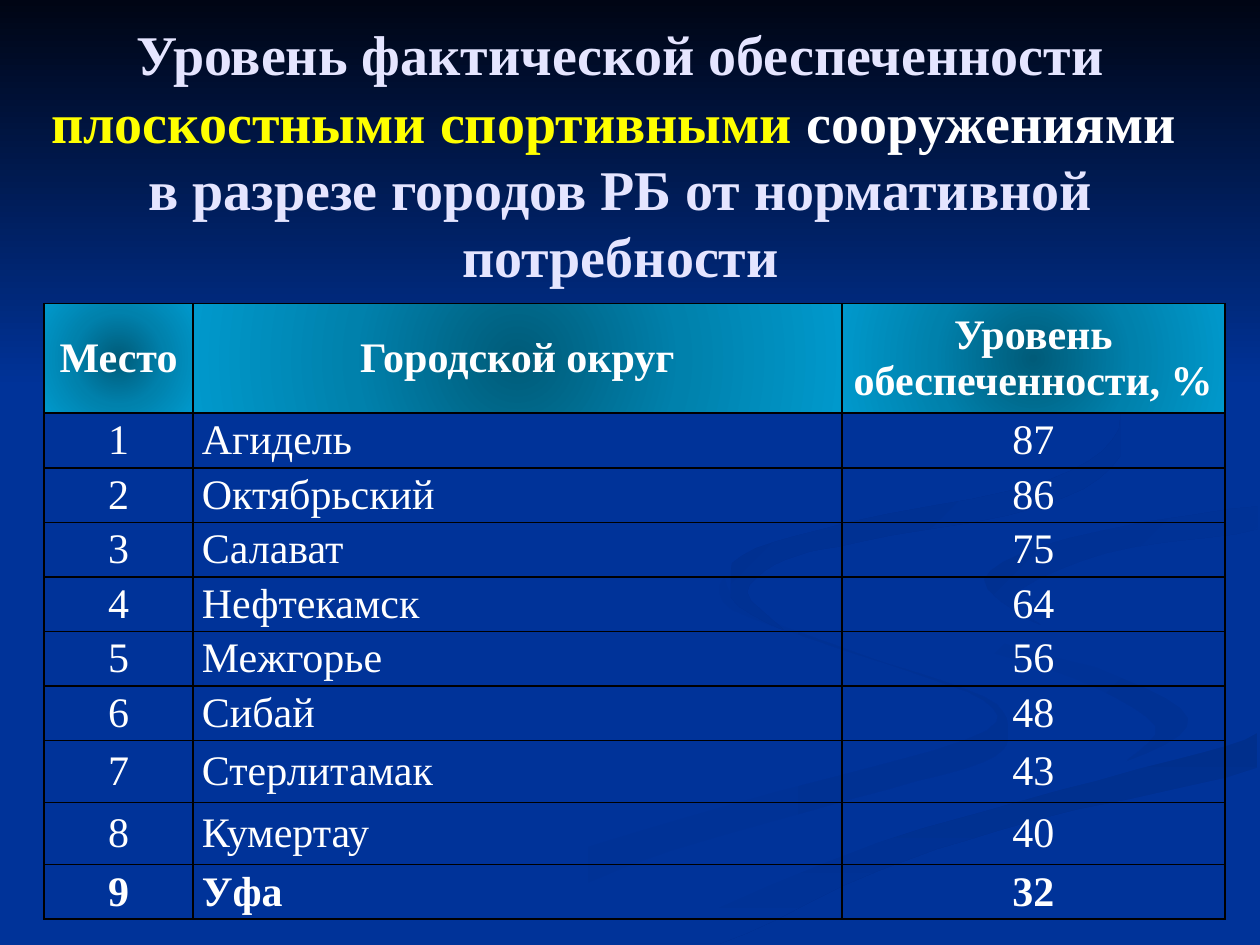
from dataclasses import dataclass
from typing import Sequence

from lxml.etree import SubElement
from pptx import Presentation
from pptx.dml.color import RGBColor
from pptx.enum.shapes import MSO_SHAPE as Preset
from pptx.enum.text import MSO_ANCHOR as Anchor, PP_ALIGN as Align
from pptx.oxml.ns import qn
from pptx.util import Cm, Pt

FONT = "Times New Roman"
BLUE, WHITE, BLACK = "003399", "FFFFFF", "000000"
LAVENDER, YELLOW = "E5E5FF", "FFFF00"
HEADER_COLOURS = ("005B79", "0081AC", "0099CC")
UNIT = Cm(2.54) / 100
STEPS = 5


@dataclass(frozen=True)
class Ribbon:
    """A background curl, with the knots of its outline in hundredths of an inch."""
    colours: tuple[str, str]
    angle: int
    knots: tuple[tuple[int, int], ...]


@dataclass(frozen=True)
class City:
    """A table row with a city and its provision level."""
    name: str
    level: int
    height: float = 1.1
    bold: bool = False


RIBBONS = (
    Ribbon((BLUE, "003193"), 0, (
        (781, 553), (682, 519), (594, 485), (575, 459), (581, 484), (679, 519),
        (781, 556), (767, 587), (579, 639), (417, 690), (300, 749), (361, 749),
        (499, 687), (676, 634), (780, 605), (800, 581))),
    Ribbon((BLUE, "003193"), 45, (
        (943, 570), (905, 540), (792, 509), (724, 464), (755, 505), (854, 539),
        (917, 576), (894, 605), (932, 589))),
    Ribbon(("002F8C", BLUE), 90, (
        (503, 749), (571, 749), (695, 692), (821, 651), (998, 609), (998, 581),
        (903, 610), (696, 669), (569, 719))),
    Ribbon((BLUE, BLUE), 0, (
        (725, 464), (759, 498), (871, 530), (943, 570), (892, 605), (743, 643),
        (573, 703), (477, 749), (503, 749), (696, 669), (904, 610), (999, 581),
        (999, 538), (866, 509), (781, 463), (850, 427), (999, 402), (999, 387),
        (874, 408), (755, 432))),
    Ribbon(("003091", BLUE), 45, (
        (781, 460), (826, 496), (805, 472), (878, 439), (998, 420), (998, 402),
        (849, 427))),
    Ribbon(("002F8E", BLUE), 45, (
        (683, 430), (825, 402), (889, 362), (880, 307), (762, 233), (870, 299),
        (888, 341), (830, 382), (676, 414), (589, 441), (580, 474), (622, 500),
        (593, 470), (624, 444))),
)
CITIES = (
    City("Агидель", 87),
    City("Октябрьский", 86),
    City("Салават", 75),
    City("Нефтекамск", 64),
    City("Межгорье", 56),
    City("Сибай", 48),
    City("Стерлитамак", 43, 1.25),
    City("Кумертау", 40, 1.25),
    City("Уфа", 32, bold=True),
)
HEADINGS = ("Место", "Городской округ", "Уровень обеспеченности, %")
COLUMN_WIDTHS = (3, 13.08, 7.72)
HEADER_HEIGHT = 2.21


def rgb(colour: str) -> RGBColor:
    """Turn a hex string into a colour."""
    return RGBColor.from_string(colour)


def add_gradient(properties, colours: Sequence[str], angle: int | None = None) -> None:
    """Append a linear gradient, or a circular one when no angle is given."""
    gradient = SubElement(properties, qn("a:gradFill"), rotWithShape="1")
    stops = SubElement(gradient, qn("a:gsLst"))
    for index, colour in enumerate(colours):
        position = 100000 * index // (len(colours) - 1)
        stop = SubElement(stops, qn("a:gs"), pos=str(position))
        SubElement(stop, qn("a:srgbClr"), val=colour)
    if angle is None:
        circle = SubElement(gradient, qn("a:path"), path="circle")
        SubElement(circle, qn("a:fillToRect"), dict.fromkeys("ltrb", "50000"))
    else:
        SubElement(gradient, qn("a:lin"), ang=str(angle * 60000), scaled="0")


def finish_shape(shape, colours: Sequence[str], angle: int) -> None:
    """Give a background shape its gradient, without line or shadow."""
    add_gradient(shape._element.spPr, colours, angle)
    shape.line.fill.background()
    shape.shadow.inherit = False


def smooth(knots: Sequence[tuple[int, int]]) -> list[tuple[int, int]]:
    """Join the knots by a closed spline that stays within their bounds."""
    lows, highs = [[pick(axis) for axis in zip(*knots)] for pick in (min, max)]
    points = []
    for index in range(len(knots)):
        corners = [knots[(index + shift) % len(knots)] for shift in (-1, 0, 1, 2)]
        for step in range(STEPS):
            t = step / STEPS
            point = []
            for (a, b, c, d), low, high in zip(zip(*corners), lows, highs):
                value = b + t / 2 * (c - a + t * (2 * a - 5 * b + 4 * c - d
                                                  + t * (3 * b - a - 3 * c + d)))
                point.append(round(min(max(value, low), high)))
            points.append(tuple(point))
    return points


def draw_ribbon(slide, ribbon: Ribbon) -> None:
    """Draw one closed curl."""
    start, *others = smooth(ribbon.knots)
    builder = slide.shapes.build_freeform(*start, scale=UNIT)
    builder.add_line_segments(others, close=True)
    finish_shape(builder.convert_to_shape(), ribbon.colours, ribbon.angle)


def add_run(paragraph, text: str, size: float, colour: str, bold: bool) -> None:
    """Add one formatted run to a paragraph."""
    run = paragraph.add_run()
    run.text = text
    run.font.name = FONT
    run.font.size = Pt(size)
    run.font.bold = bold
    run.font.color.rgb = rgb(colour)


def fill_cell(cell, text: str, align: Align, bold: bool, header: bool) -> None:
    """Write and format one table cell."""
    cell.vertical_anchor = Anchor.MIDDLE
    cell.margin_left = cell.margin_right = Cm(0.18)
    cell.margin_top = cell.margin_bottom = 0
    paragraph = cell.text_frame.paragraphs[0]
    paragraph.alignment = align
    add_run(paragraph, text, 24, WHITE, bold)
    properties = cell._tc.get_or_add_tcPr()
    for side in ("lnL", "lnR", "lnT", "lnB"):
        border = SubElement(properties, qn(f"a:{side}"), w=str(Pt(1)))
        solid = SubElement(border, qn("a:solidFill"))
        SubElement(solid, qn("a:srgbClr"), val=BLACK)
    if header:
        add_gradient(properties, HEADER_COLOURS)
    else:
        cell.fill.background()


def draw_table(slide) -> None:
    """Draw the ranking of cities."""
    heights = (HEADER_HEIGHT, *(city.height for city in CITIES))
    frame = slide.shapes.add_table(len(heights), len(HEADINGS), Cm(0.89), Cm(6.12),
                                   Cm(sum(COLUMN_WIDTHS)), Cm(sum(heights)))
    table = frame.table
    table.first_row = table.horz_banding = False
    for column, width in zip(table.columns, COLUMN_WIDTHS):
        column.width = Cm(width)
    for row, height in zip(table.rows, heights):
        row.height = Cm(height)
    for column, heading in enumerate(HEADINGS):
        fill_cell(table.cell(0, column), heading, Align.CENTER, True, True)
    for place, city in enumerate(CITIES, 1):
        for column, text in enumerate((str(place), city.name, str(city.level))):
            align = Align.LEFT if column == 1 else Align.CENTER
            fill_cell(table.cell(place, column), text, align, city.bold, False)


def write_title(slide) -> None:
    """Place the title in front and write its runs."""
    title = slide.shapes.title
    slide.shapes._spTree.append(title._element)
    title.left, title.top, title.width, title.height = Cm(0.51), Cm(1.52), Cm(24), Cm(3.18)
    title.text_frame.word_wrap = True
    title.text_frame.vertical_anchor = Anchor.MIDDLE
    paragraph = title.text_frame.paragraphs[0]
    paragraph.alignment = Align.CENTER
    add_run(paragraph, "Уровень фактической обеспеченности ", 32, LAVENDER, True)
    add_run(paragraph, "плоскостными спортивными ", 32, YELLOW, True)
    add_run(paragraph, "сооружениями ", 32, WHITE, True)
    paragraph.add_line_break()
    add_run(paragraph, "в разрезе городов РБ от нормативной потребности", 32, LAVENDER, True)


def main() -> None:
    """Build and save the presentation."""
    presentation = Presentation()
    presentation.slide_width, presentation.slide_height = Cm(25.4), Cm(19.05)
    slide = presentation.slides.add_slide(presentation.slide_layouts[5])
    slide.background.fill.solid()
    slide.background.fill.fore_color.rgb = rgb(BLUE)
    for ribbon in RIBBONS:
        draw_ribbon(slide, ribbon)
    sky = slide.shapes.add_shape(Preset.RECTANGLE, 0, 0, Cm(25.4), Cm(7.82))
    finish_shape(sky, ("000514", BLUE), 90)
    draw_table(slide)
    write_title(slide)
    presentation.save("out.pptx")


if __name__ == "__main__":
    main()
